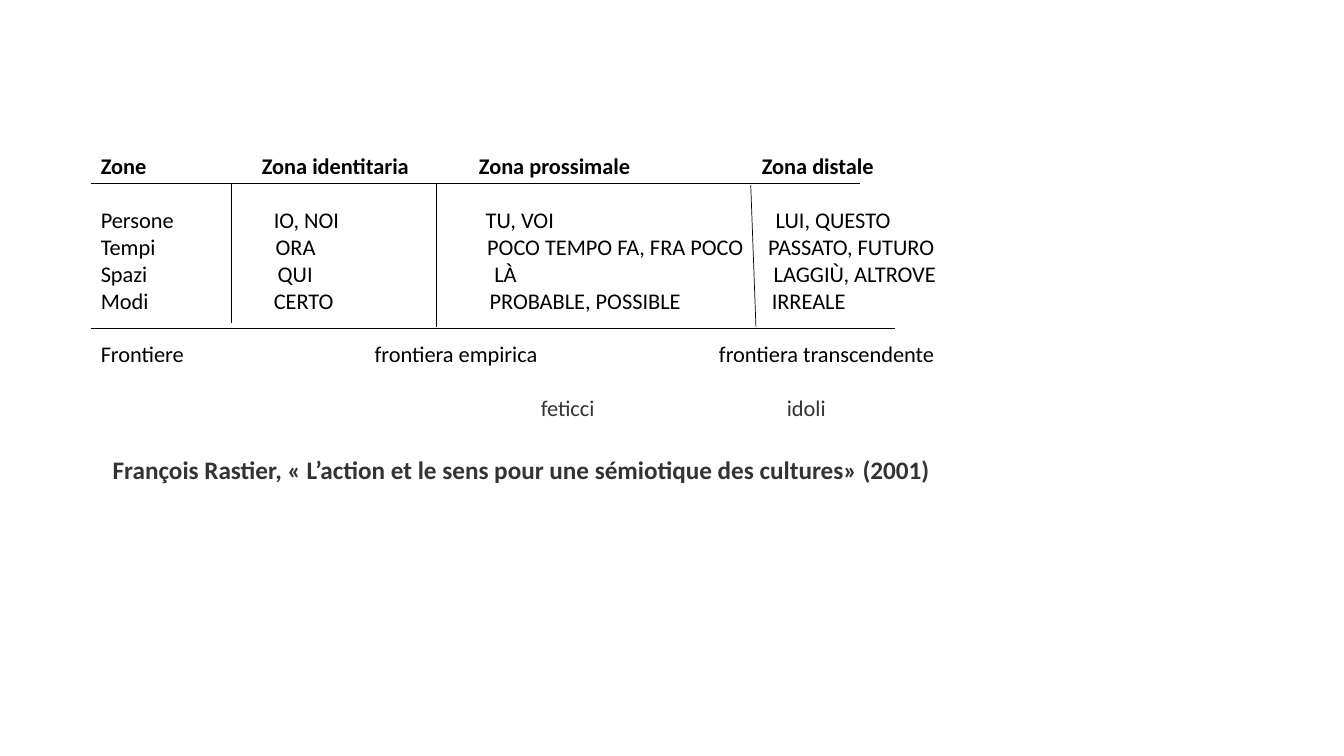
from lxml import etree
from pptx import Presentation
from pptx.dml.color import RGBColor
from pptx.enum.shapes import MSO_CONNECTOR
from pptx.oxml.ns import qn
from pptx.util import Cm, Pt

BLACK = "000000"
GREY = "333333"
ROW_GAP = 19.3

# (cells, tab stops in cm, space before in points, bold, colour)
ZONE_ROWS = [
    (["Zone", "Zona identitaria", "Zona prossimale", "Zona distale"],
     [4.06, 9.53, 16.66], 0, True, BLACK),
    (["Persone", "IO, NOI", "TU, VOI", "LUI, QUESTO"],
     [4.36, 9.7, 17.01], ROW_GAP, False, BLACK),
    (["Tempi", "ORA", "POCO TEMPO FA, FRA POCO", "PASSATO, FUTURO"],
     [4.41, 9.74, 16.82], 0, False, BLACK),
    (["Spazi", "QUI", "LÀ", "LAGGIÙ, ALTROVE"],
     [4.46, 9.92, 16.96], 0, False, BLACK),
    (["Modi", "CERTO", "PROBABLE, POSSIBLE", "IRREALE"],
     [4.36, 9.8, 16.91], 0, False, BLACK),
    (["Frontiere", "frontiera empirica", "frontiera transcendente"],
     [6.9, 15.58], ROW_GAP, False, BLACK),
    (["", "feticci", "idoli"], [11.09, 17.29], ROW_GAP, False, GREY),
]

# x1, y1, x2, y2 in cm
RULES = [
    (2.29, 4.62, 21.67, 4.62),
    (2.29, 8.28, 22.56, 8.28),
    (5.84, 4.62, 5.84, 8.15),
    (11.0, 4.62, 11.0, 8.23),
    (18.92, 4.67, 19.05, 8.23),
]


def rgb(value):
    return RGBColor.from_string(value)


def add_text_box(slide, left, top, width, height):
    sp = slide.shapes.add_textbox(Cm(left), Cm(top), Cm(width), Cm(height))
    tf = sp.text_frame
    tf.word_wrap = True
    return tf


def set_tabs(p, stops):
    tab_list = etree.SubElement(p._p.get_or_add_pPr(), qn("a:tabLst"))
    for stop in stops:
        etree.SubElement(tab_list, qn("a:tab"), pos=str(int(Cm(stop))), algn="l")


def format_runs(p, size, bold, color):
    for r in p.runs:
        r.font.name = "Calibri"
        r.font.size = Pt(size)
        r.font.bold = bold
        r.font.color.rgb = rgb(color)


def add_zone_rows(slide):
    """Write each row as one paragraph whose cells sit on its own tab stops."""
    tf = add_text_box(slide, 2.29, 3.71, 24.99, 7.09)
    for i, (cells, stops, space, bold, color) in enumerate(ZONE_ROWS):
        p = tf.add_paragraph() if i else tf.paragraphs[0]
        p.text = "\t".join(cells)
        set_tabs(p, stops)
        p.space_before = Pt(space)
        format_runs(p, 16, bold, color)


def add_rule(slide, x1, y1, x2, y2):
    line = slide.shapes.add_connector(
        MSO_CONNECTOR.STRAIGHT, Cm(x1), Cm(y1), Cm(x2), Cm(y2))
    line.line.color.rgb = rgb(BLACK)
    line.line.width = Pt(0.5)
    etree.SubElement(line._element.spPr, qn("a:effectLst"))


def add_citation(slide):
    p = add_text_box(slide, 2.59, 11.33, 23.52, 2.57).paragraphs[0]
    p.text = ("François Rastier, « L’action et le sens pour une sémiotique "
              "des cultures» (2001)")
    format_runs(p, 18, True, GREY)


def main():
    prs = Presentation()
    prs.slide_width, prs.slide_height = Cm(33.87), Cm(19.05)
    slide = prs.slides.add_slide(prs.slide_layouts[6])
    add_zone_rows(slide)
    for rule in RULES:
        add_rule(slide, *rule)
    add_citation(slide)
    prs.save("out.pptx")


if __name__ == "__main__":
    main()
